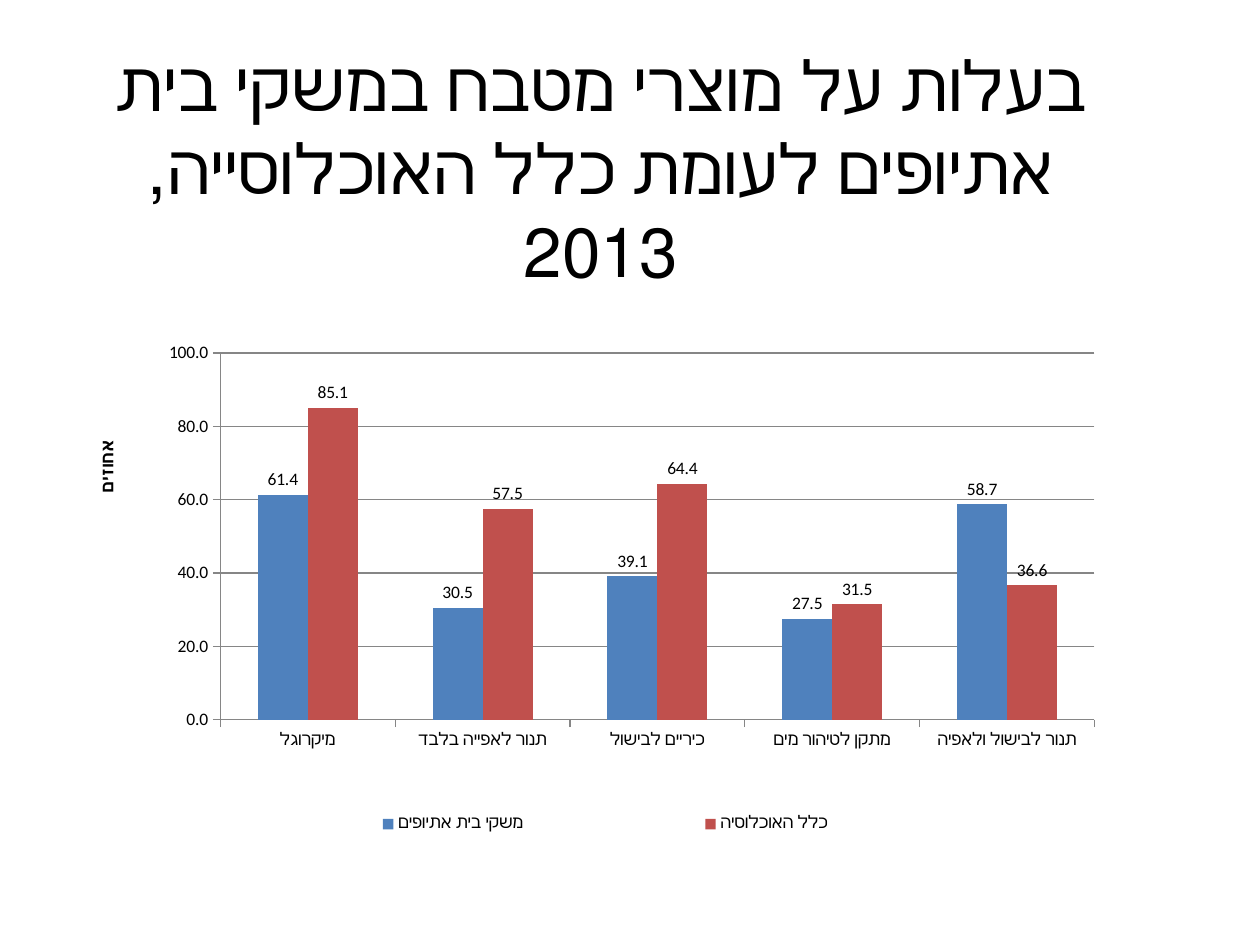
from lxml import etree
from pptx import Presentation
from pptx.chart.data import CategoryChartData
from pptx.dml.color import RGBColor
from pptx.enum.chart import XL_CHART_TYPE as ChartType
from pptx.enum.chart import XL_LABEL_POSITION as LabelPos
from pptx.enum.chart import XL_LEGEND_POSITION as LegendPos
from pptx.enum.chart import XL_TICK_MARK as Tick
from pptx.enum.text import MSO_ANCHOR as Anchor
from pptx.enum.text import PP_ALIGN as Align
from pptx.oxml.ns import qn
from pptx.util import Inches, Pt

BLACK = RGBColor(0x00, 0x00, 0x00)
GRAY = RGBColor(0x86, 0x86, 0x86)
BLUE = RGBColor(0x4F, 0x81, 0xBD)
RED = RGBColor(0xC0, 0x50, 0x4D)
FONT = "Calibri"


def place(part, index, **settings):
    """Give a chart part a manual layout, as fractions of the chart."""
    for old in part.findall(qn("c:layout")):
        part.remove(old)
    layout = etree.Element(qn("c:layout"))
    manual = etree.SubElement(layout, qn("c:manualLayout"))
    for tag, value in settings.items():
        etree.SubElement(manual, qn(f"c:{tag}")).set("val", str(value))
    part.insert(index, layout)


prs = Presentation()
prs.slide_width, prs.slide_height = Inches(10), Inches(7.5)
slide = prs.slides.add_slide(prs.slide_layouts[6])

# Title, right to left, closed by a line break
heading = slide.shapes.add_textbox(Inches(0.59), Inches(1.15), Inches(8.36), Inches(1.01))
frame = heading.text_frame
frame.word_wrap = True
frame.vertical_anchor = Anchor.MIDDLE
line = frame.paragraphs[0]
line.alignment = Align.CENTER
line._p.get_or_add_pPr().set("rtl", "1")
line.font.size = Pt(39.6)
run = line.add_run()
run.text = "בעלות על מוצרי מטבח במשקי בית אתיופים לעומת כלל האוכלוסייה, 2013"
run.font.size = Pt(39.6)
run.font.name = FONT
run.font.color.rgb = BLACK
line.add_line_break()

# Ownership chart
ownership = CategoryChartData(number_format="0.0")
ownership.categories = ["מיקרוגל", "תנור לאפייה בלבד", "כיריים לבישול",
                        "מתקן לטיהור מים", "תנור לבישול ולאפיה"]
ownership.add_series("משקי בית אתיופים", [61.4, 30.5, 39.1, 27.5, 58.7])
ownership.add_series("כלל האוכלוסיה", [85.1, 57.5, 64.4, 31.5, 36.6])
chart = slide.shapes.add_chart(
    ChartType.COLUMN_CLUSTERED, Inches(0.5), Inches(1.78),
    Inches(8.44), Inches(4.96), ownership).chart
chart.has_title = False
chart.font.name = FONT
chart.font.size = Pt(10)
chart.font.color.rgb = BLACK
place(chart._chartSpace.chart.plotArea, 0, layoutTarget="inner",
      xMode="edge", yMode="edge", x=0.148, y=0.206, w=0.822, h=0.587)

# Columns and value labels
columns = chart.plots[0]
columns.gap_width = 150
columns.overlap = 0
columns.vary_by_categories = False
for series, color in zip(columns.series, (BLUE, RED)):
    series.invert_if_negative = False
    series.format.fill.solid()
    series.format.fill.fore_color.rgb = color
    labels = series.data_labels
    labels.show_value = True
    labels.number_format = "0.0"
    labels.number_format_is_linked = False
    labels.position = LabelPos.OUTSIDE_END

# Axes
percent = chart.value_axis
for axis in (chart.category_axis, percent):
    axis.major_tick_mark = Tick.OUTSIDE
    axis.minor_tick_mark = Tick.NONE
    axis.format.line.color.rgb = GRAY
percent.minimum_scale, percent.maximum_scale = 0, 100
percent.major_unit = 20
percent.has_major_gridlines = True
percent.major_gridlines.format.line.color.rgb = GRAY
percent.tick_labels.number_format = "#,##0.0"
percent.tick_labels.number_format_is_linked = False
unit = percent.axis_title.text_frame.paragraphs[0].add_run()
unit.text = "אחוזים"
unit.font.size = Pt(10)
unit.font.bold = True
unit.font.name = FONT
unit.font.color.rgb = BLACK
place(percent.axis_title._element, 1, xMode="edge", yMode="edge", x=0.03, y=0.34)

# Legend, spread out below the columns
chart.has_legend = True
chart.legend.position = LegendPos.LEFT
chart.legend.include_in_layout = False
place(chart.legend._element, 1, xMode="edge", yMode="edge",
      x=0.135, y=0.92, w=0.75, h=0.08)

prs.save("out.pptx")
